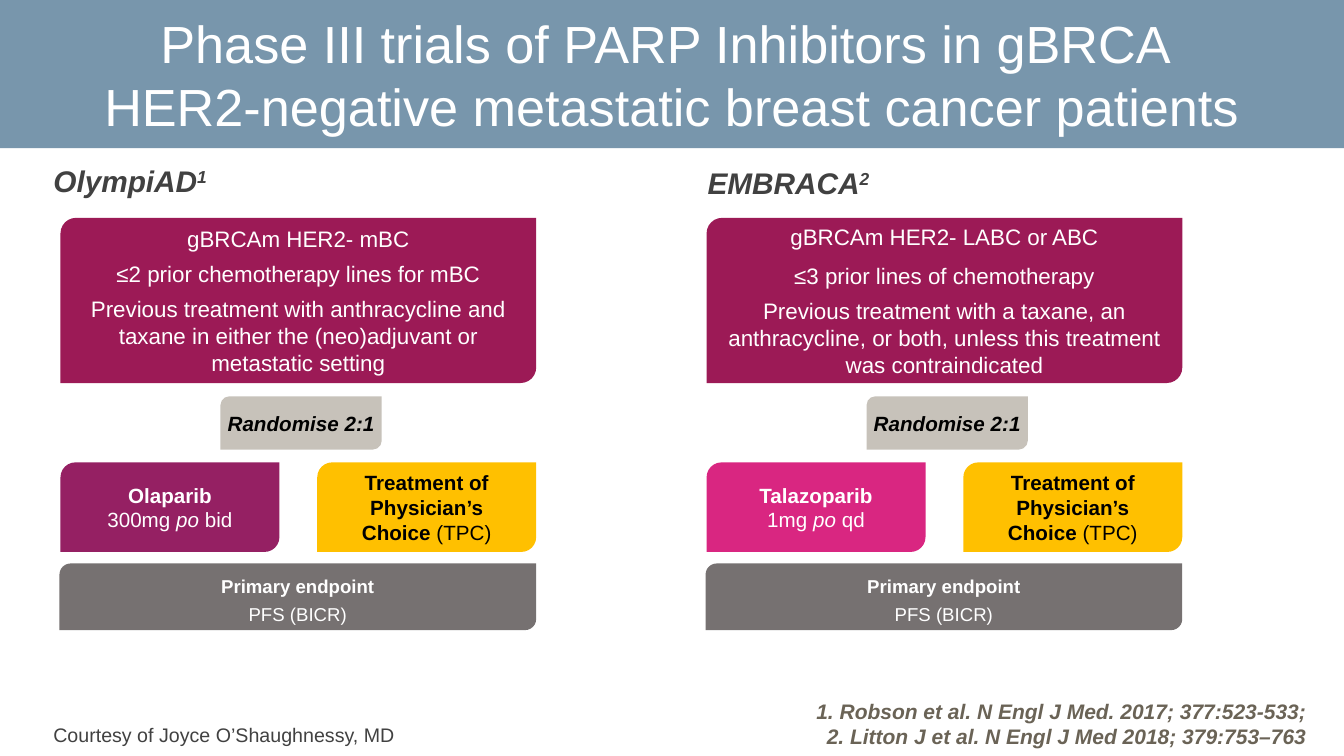
from pptx import Presentation
from pptx.dml.color import RGBColor
from pptx.enum.shapes import MSO_SHAPE
from pptx.enum.text import MSO_ANCHOR, MSO_AUTO_SIZE, PP_ALIGN
from pptx.oxml.ns import qn
from pptx.util import Pt
from lxml import etree

CARD = MSO_SHAPE.ROUND_2_DIAG_RECTANGLE
TOP, MIDDLE, BOTTOM = MSO_ANCHOR.TOP, MSO_ANCHOR.MIDDLE, MSO_ANCHOR.BOTTOM
NO_FIT, GROW = MSO_AUTO_SIZE.NONE, MSO_AUTO_SIZE.SHAPE_TO_FIT_TEXT
LEFT, CENTER, RIGHT = PP_ALIGN.LEFT, PP_ALIGN.CENTER, PP_ALIGN.RIGHT

BOLD, PLAIN, ITALIC = {"bold": True}, {"bold": False}, {"italic": True}
BOLD_ITALIC = {**BOLD, **ITALIC}
WHITE, BLACK, DARK = "FFFFFF", "000000", "414141"

TRIALS = [
    {"name": "OlympiAD", "note": "1", "x": 43.2, "name_dx": -12.2, "inset": (7.2, 3.6),
     "criteria": ["gBRCAm HER2- mBC", "≤2 prior chemotherapy lines for mBC",
                  "Previous treatment with anthracycline and taxane in either "
                  "the (neo)adjuvant or metastatic setting"],
     "gaps": [(0, 6)] * 3, "drug": "Olaparib", "fill": "952063",
     "dose": [("300mg ", {}), ("po", ITALIC), (" bid", {})]},
    {"name": "EMBRACA", "note": "2", "x": 504.7, "name_dx": -8.6, "inset": (9.4, 5),
     "criteria": ["gBRCAm HER2- LABC or ABC", "≤3 prior lines of chemotherapy",
                  "Previous treatment with a taxane, an anthracycline, or both, "
                  "unless this treatment was contraindicated"],
     "gaps": [(0, 6), (3, 3), (3, 3)], "drug": "Talazoparib", "fill": "D92681",
     "dose": [("1mg ", {}), ("po ", ITALIC), ("qd", {})]},
]


def rgb(value):
    """Turn a hex string into a colour."""
    return RGBColor.from_string(value)


def place(sp, box):
    """Move and size a shape to a box in points."""
    sp.left, sp.top, sp.width, sp.height = map(Pt, box)


def write(sp, paragraphs, size, color, align=CENTER, anchor=MIDDLE,
          inset=(7.2, 3.6), gaps=None, fit=NO_FIT, wrap=True):
    """Fill a shape with paragraphs made of (text, format) runs."""
    tf = sp.text_frame
    mx, my = map(Pt, inset)
    frame = {"auto_size": fit, "word_wrap": wrap, "vertical_anchor": anchor,
             "margin_left": mx, "margin_right": mx, "margin_top": my, "margin_bottom": my}
    for key, value in frame.items():
        setattr(tf, key, value)
    for i, runs in enumerate(paragraphs):
        p = tf.paragraphs[0] if i == 0 else tf.add_paragraph()
        p.alignment = align
        before, after = gaps[i] if gaps else (0, 0)
        p.space_before, p.space_after = Pt(before), Pt(after)
        for j, (text, extra) in enumerate(runs):
            for k, line in enumerate(text.split("\n")):
                if k:
                    p.add_line_break()
                r = p.add_run()
                r.text = line
                font = {"name": "Arial", "size": Pt(size), "bold": False, "italic": False, **extra}
                baseline = font.pop("baseline", None)
                for key, value in font.items():
                    setattr(r.font, key, value)
                r.font.color.rgb = rgb(color)
                if baseline:
                    r._r.get_or_add_rPr().set("baseline", baseline)


def add_card(slide, box, fill, paragraphs, size, color, corner=0.16667, **layout):
    """Add a filled card with two opposite round corners."""
    sp = slide.shapes.add_shape(CARD, *map(Pt, box))
    sp.shadow.inherit = False
    sp.adjustments[0] = corner
    sp.fill.solid()
    sp.fill.fore_color.rgb = rgb(fill)
    sp.line.fill.background()
    write(sp, paragraphs, size, color, **layout)
    return sp


def add_banner(sp, box):
    """Place the title as a translucent band across the slide."""
    place(sp, box)
    sp.fill.solid()
    sp.fill.fore_color.rgb = rgb("184B70")
    clr = sp._element.spPr.find(".//" + qn("a:srgbClr"))
    etree.SubElement(clr, qn("a:alpha")).set("val", "58000")
    write(sp, [[("Phase III trials of PARP Inhibitors in gBRCA \n"
                 "HER2-negative metastatic breast cancer patients", {})]], 37.3, WHITE)


def add_trial(slide, heading, trial, box):
    """Build one trial column, from its heading to its endpoint."""
    x, y, w, h = box
    arm_w, arm_h, arm_y = 156.4, 64, y + 218
    place(heading, (x + trial["name_dx"], y, w, 42.5))
    write(heading, [[(trial["name"], BOLD_ITALIC),
                     (trial["note"], {**BOLD_ITALIC, "baseline": "30000"})]],
          21.3, DARK, align=LEFT, anchor=TOP, inset=trial["inset"])
    add_card(slide, (x, y + 43.3, w, 118), "9C1A56", [[(t, {})] for t in trial["criteria"]],
             16, WHITE, corner=0.094, inset=(5.8, 8.6), gaps=trial["gaps"])
    add_card(slide, (x + (w - 115.2) / 2 + 2, y + 170.8, 115.2, 38), "C7C2BA",
             [[("Randomise 2:1", BOLD_ITALIC)]], 14.7, BLACK, inset=(2.9, 5))
    add_card(slide, (x, arm_y, arm_w, arm_h), trial["fill"],
             [[(trial["drug"], BOLD)], trial["dose"]], 14.7, WHITE, inset=(9.4, 5))
    add_card(slide, (x + w - arm_w, arm_y, arm_w, arm_h), "FFC000",
             [[("Treatment of Physician’s Choice ", BOLD), ("(TPC)", PLAIN)]],
             14.7, BLACK, inset=(9.4, 5))
    sp = add_card(slide, (x - 0.7, y + h - 47.6, w + 0.7, 47.6), "767171",
                  [[("Primary endpoint", BOLD)], [("PFS (BICR)", PLAIN)]],
                  13.3, WHITE, gaps=[(0, 4)] * 2)
    sp.text_frame.margin_top = Pt(8.6)


def add_sources(slide, box):
    """Add the courtesy line and the references at the foot."""
    x, y, w, h = box
    sp = slide.shapes.add_textbox(*map(Pt, (x, y + 31, 260, 24.5)))
    write(sp, [[("Courtesy of Joyce O’Shaughnessy, MD", {})]], 14, DARK,
          align=LEFT, anchor=TOP, fit=GROW, wrap=False)
    sp = slide.shapes.add_textbox(*map(Pt, (x + w - 802.8, y, 802.8, h)))
    write(sp, [[("1. Robson et al. N Engl J Med. 2017; 377:523-533; ", BOLD_ITALIC)],
               [("2. Litton J et al. N Engl J Med 2018; 379:753–763 ", BOLD_ITALIC)]],
          15, "6A6356", align=RIGHT, anchor=BOTTOM, inset=(9.4, 5))


def main():
    """Build the slide and save it."""
    prs = Presentation()
    prs.slide_width, prs.slide_height = Pt(960), Pt(540)
    slide = prs.slides.add_slide(prs.slide_layouts[4])
    title, left, left_body, right, right_body = slide.placeholders
    for sp in (left_body, right_body):
        sp._element.getparent().remove(sp._element)
    add_banner(title, (0, 0, 960, 105.8))
    for heading, trial in zip((left, right), TRIALS):
        add_trial(slide, heading, trial, (trial["x"], 112.3, 339.8, 337.8))
    add_sources(slide, (31, 481.7, 915.8, 58.3))
    prs.save("out.pptx")


if __name__ == "__main__":
    main()
